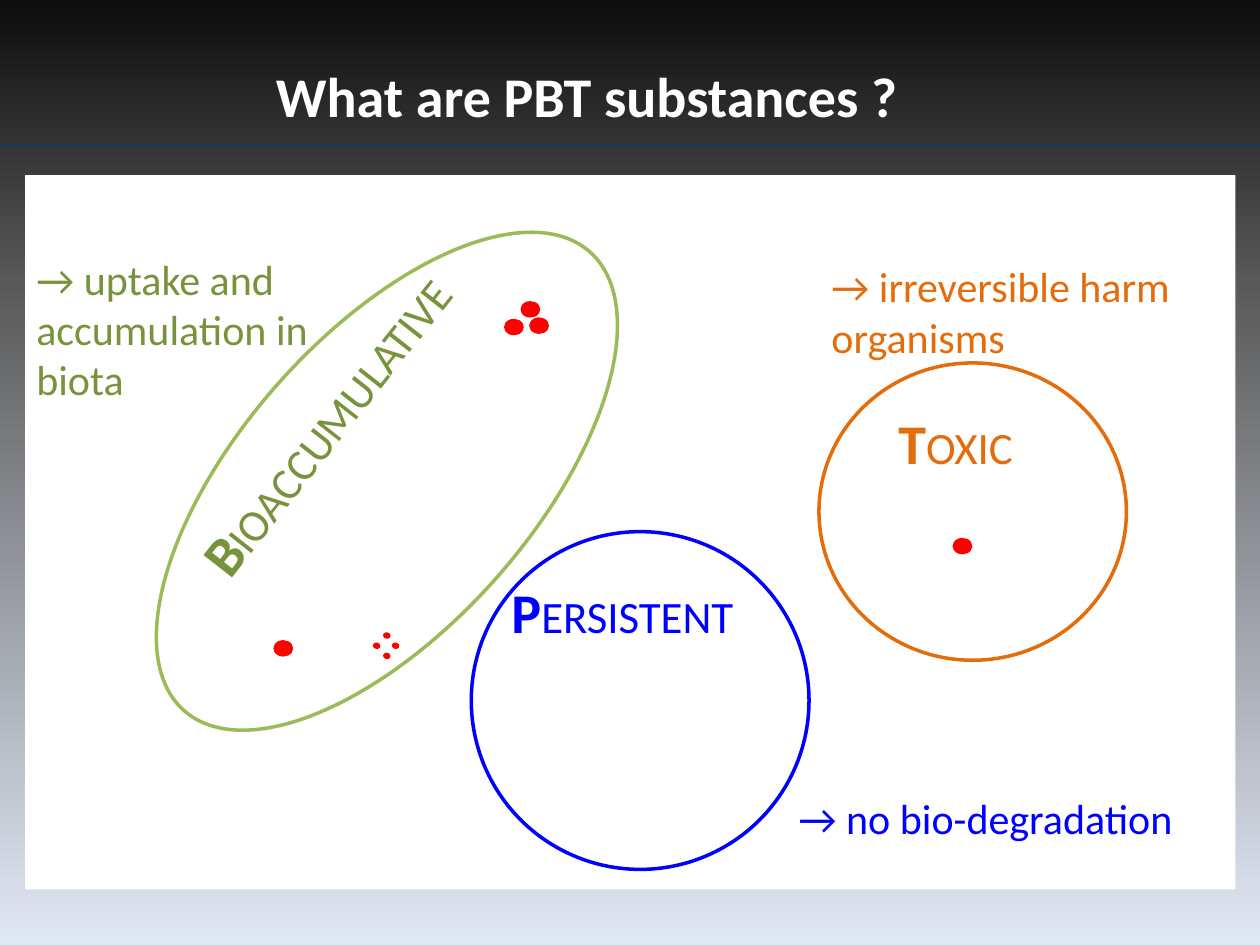
from copy import deepcopy
from dataclasses import dataclass

from lxml.etree import SubElement
from pptx import Presentation
from pptx.dml.color import RGBColor
from pptx.enum.shapes import MSO_CONNECTOR, MSO_SHAPE
from pptx.enum.text import MSO_ANCHOR, MSO_AUTO_SIZE, PP_ALIGN
from pptx.oxml.ns import qn
from pptx.util import Pt

WHITE = RGBColor(0xFF, 0xFF, 0xFF)
RED = RGBColor(0xFF, 0x00, 0x00)
BLUE = RGBColor(0x00, 0x00, 0xFF)
ORANGE = RGBColor(0xE4, 0x6C, 0x0A)
GREEN = RGBColor(0x9B, 0xBB, 0x59)
DARK_GREEN = RGBColor(0x77, 0x93, 0x3C)
NAVY = RGBColor(0x17, 0x37, 0x5E)
BACKGROUND_STOPS = (
    (0, RGBColor(0x0D, 0x0D, 0x0D)),
    (0.3, RGBColor(0x59, 0x59, 0x59)),
    (1, RGBColor(0xE1, 0xE8, 0xF5)),
)
FONT = "Calibri"


@dataclass
class Box:
    left: float
    top: float
    width: float
    height: float
    rotation: float = 0

    def lengths(self):
        return Pt(self.left), Pt(self.top), Pt(self.width), Pt(self.height)


@dataclass
class Property:
    """One substance property: its outline, its name and its explanation."""
    name: str
    explanation: str
    outline_color: RGBColor
    text_color: RGBColor
    outline: Box
    label: Box
    note: Box


PROPERTIES = (
    Property("Bioaccumulative", "→ uptake and accumulation in biota", GREEN, DARK_GREEN,
             Box(46.1, 191.5, 350, 167, 311.5), Box(64.8, 220.3, 242, 44.6, 308.1),
             Box(13.7, 141.1, 195.8, 94.3)),
    Property("Persistent", "→ no bio-degradation", BLUE, BLUE,
             Box(269.3, 303.8, 193, 193), Box(275, 326.9, 221, 44.6),
             Box(449.3, 449.3, 230.4, 36)),
    Property("Toxic", "→ irreversible harm organisms", ORANGE, ORANGE,
             Box(468, 207.4, 175.7, 169.9), Box(496.1, 230.4, 156.2, 44.6),
             Box(468, 145.4, 226.8, 65.5)),
)

# Top left corners of the particles
LARGE_DOTS = ((156.2, 365.8), (297.4, 172.1), (302.4, 181.4), (288, 182.2), (544.3, 307.4))
SMALL_DOTS = ((213.1, 367.2), (223.9, 367.2), (218.9, 373), (218.9, 361.4))


def set_background(slide) -> None:
    fill = slide.background.fill
    fill.gradient()
    fill.gradient_angle = 270
    stop_list = slide.background._cSld.find(".//" + qn("a:gsLst"))
    stop_list.insert(1, deepcopy(stop_list[0]))
    for stop, (position, color) in zip(fill.gradient_stops, BACKGROUND_STOPS):
        stop.position = position
        stop.color.rgb = color


def add_filled(slide, kind: MSO_SHAPE, box: Box, color: RGBColor) -> None:
    shape = slide.shapes.add_shape(kind, *box.lengths())
    shape.rotation = box.rotation
    shape.shadow.inherit = False
    shape.fill.solid()
    shape.fill.fore_color.rgb = color
    shape.line.fill.background()


def add_outline(slide, box: Box, color: RGBColor) -> None:
    shape = slide.shapes.add_shape(MSO_SHAPE.OVAL, *box.lengths())
    shape.rotation = box.rotation
    shape.shadow.inherit = False
    shape.fill.background()
    shape.line.color.rgb = color
    shape.line.width = Pt(2)


def add_run(paragraph, text: str, size: float, color: RGBColor, bold: bool = False):
    run = paragraph.add_run()
    run.text = text
    run.font.name = FONT
    run.font.size = Pt(size)
    run.font.bold = bold
    run.font.color.rgb = color
    return run


def add_text_box(slide, box: Box):
    shape = slide.shapes.add_textbox(*box.lengths())
    shape.rotation = box.rotation
    shape.text_frame.word_wrap = True
    return shape.text_frame


def add_label(slide, item: Property) -> None:
    frame = add_text_box(slide, item.label)
    frame.margin_left = frame.margin_right = Pt(5.8)
    frame.margin_top = frame.margin_bottom = Pt(2.9)
    paragraph = frame.paragraphs[0]
    paragraph.space_after = Pt(12)
    paragraph._p.get_or_add_pPr().set("marL", str(Pt(11.5)))
    add_run(paragraph, item.name[0], 32, item.text_color, bold=True)
    rest = add_run(paragraph, item.name[1:], 32, item.text_color)
    rest.font._element.set("cap", "small")


def add_title(slide, text: str) -> None:
    title = slide.shapes.title
    title.left, title.top, title.width, title.height = Box(150.5, 31.7, 414, 46.1).lengths()
    frame = title.text_frame
    frame.auto_size = MSO_AUTO_SIZE.NONE
    frame.vertical_anchor = MSO_ANCHOR.TOP
    frame.paragraphs[0].alignment = PP_ALIGN.LEFT
    add_run(frame.paragraphs[0], text, 32, WHITE, bold=True)


def add_rule(slide, top: float, width: float) -> None:
    line = slide.shapes.add_connector(MSO_CONNECTOR.STRAIGHT, 0, Pt(top), Pt(width), Pt(top))
    line.line.color.rgb = NAVY
    line.line.width = Pt(1.25)
    SubElement(line._element.spPr, qn("a:effectLst"))


def main() -> None:
    presentation = Presentation()
    presentation.slide_width, presentation.slide_height = Pt(720), Pt(540)
    slide = presentation.slides.add_slide(presentation.slide_layouts[5])

    # Background, heading and white panel
    set_background(slide)
    add_title(slide, "What are PBT substances ?")
    add_rule(slide, 82.8, 720)
    add_filled(slide, MSO_SHAPE.RECTANGLE, Box(14.4, 100.1, 691.5, 408.2), WHITE)

    # The three properties
    for item in PROPERTIES:
        add_outline(slide, item.outline, item.outline_color)
        add_label(slide, item)
        note = add_text_box(slide, item.note)
        add_run(note.paragraphs[0], item.explanation, 24, item.text_color)

    # Particles, whole and broken up
    for left, top in LARGE_DOTS:
        add_filled(slide, MSO_SHAPE.OVAL, Box(left, top, 11.3, 9.4), RED)
    for left, top in SMALL_DOTS:
        add_filled(slide, MSO_SHAPE.OVAL, Box(left, top, 4.3, 3.6, 11.6), RED)

    presentation.save("out.pptx")


if __name__ == "__main__":
    main()
